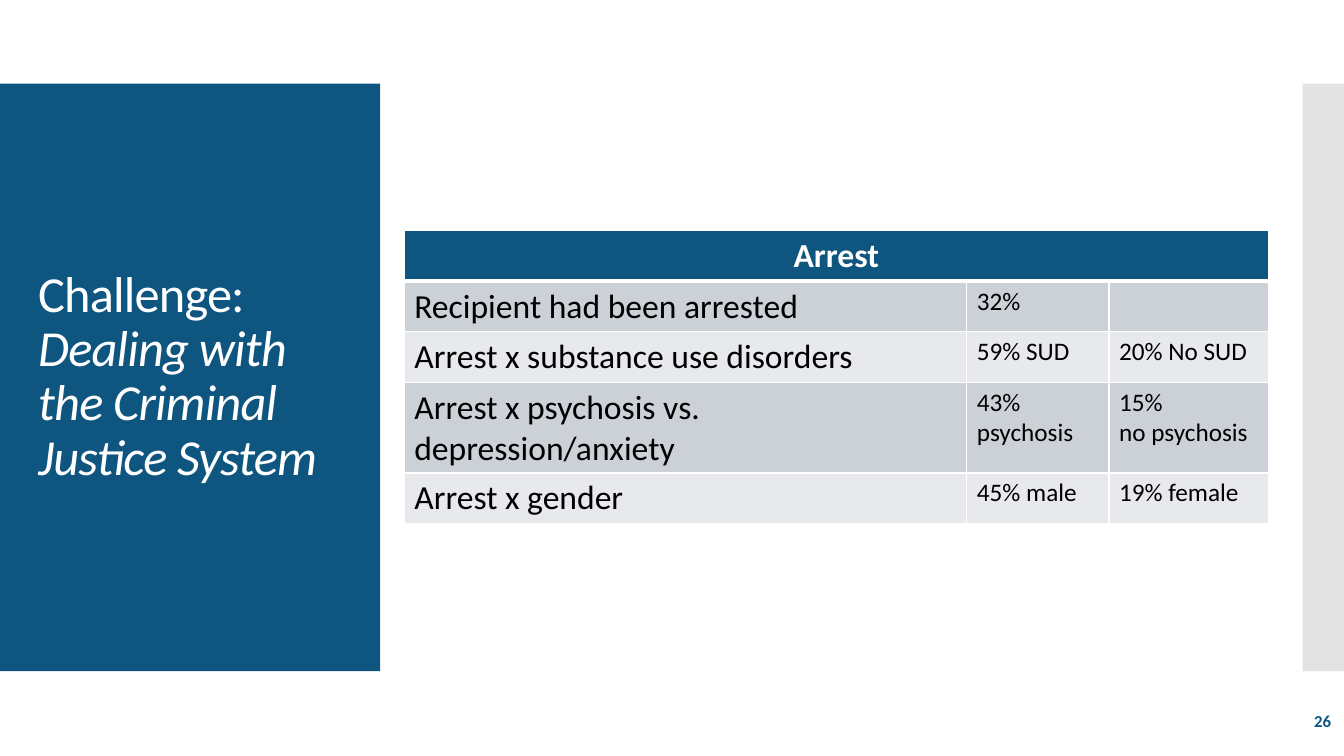
"""Build the slide on dealing with the criminal justice system."""
from pptx import Presentation
from pptx.dml.color import RGBColor
from pptx.enum.shapes import MSO_SHAPE as SHAPE
from pptx.enum.text import MSO_ANCHOR as ANCHOR, PP_ALIGN as ALIGN
from pptx.oxml.ns import qn
from pptx.util import Inches, Pt
from lxml.etree import SubElement

COLORS = {"blue": "0E5580", "grey": "C8C8C8", "white": "FFFFFF",
          "black": "000000", "dark_band": "CCD1D8", "light_band": "E7E9ED"}


def rgb(name):
    return RGBColor.from_string(COLORS[name])


def style(r, size, color, bold=False, italic=False):
    r.font.name = "Calibri"
    r.font.size = Pt(size)
    r.font.color.rgb = rgb(color)
    r.font.bold = bold
    r.font.italic = italic


prs = Presentation()
prs.slide_width, prs.slide_height = Inches(13.33), Inches(7.5)
s = prs.slides.add_slide(prs.slide_layouts[6])

for left, width, color in [(0, 3.77, "blue"), (12.92, 0.41, "grey")]:
    sp = s.shapes.add_shape(SHAPE.RECTANGLE, Inches(left), Inches(0.83),
                            Inches(width), Inches(5.83))
    sp.shadow.inherit = False
    sp.fill.solid()
    sp.fill.fore_color.rgb = rgb(color)
    sp.line.fill.background()
    if color == "grey":
        fill_color = sp._element.spPr.find(qn("a:solidFill"))[0]
        SubElement(fill_color, qn("a:alpha"), val="50000")

title = s.shapes.add_textbox(Inches(0.28), Inches(1.23), Inches(3.22), Inches(5.03))
tf = title.text_frame
tf.word_wrap = True
tf.vertical_anchor = ANCHOR.MIDDLE
p = tf.paragraphs[0]
p.line_spacing = 0.9
for text, italic in [("Challenge: ", False),
                     ("Dealing with the Criminal Justice System", True)]:
    r = p.add_run()
    r.text = text
    style(r, 36, "white", italic=italic)
    r.font._element.set("spc", "-60")

number = s.shapes.add_textbox(Inches(11.63), Inches(6.95), Inches(1.67), Inches(0.4))
tf = number.text_frame
tf.word_wrap = True
tf.vertical_anchor = ANCHOR.MIDDLE
p = tf.paragraphs[0]
p.text = "26"
p.alignment = ALIGN.RIGHT
style(p.runs[0], 12, "blue", bold=True)

rows = [
    ("Arrest", "", ""),
    ("Recipient had been arrested", "32%", ""),
    ("Arrest x substance use disorders", "59% SUD", "20% No SUD"),
    ("Arrest x psychosis vs. depression/anxiety", "43% psychosis", "15%\vno psychosis"),
    ("Arrest x gender", "45% male", "19% female"),
]
col_widths = [5.58, 1.41, 1.58]
row_heights = [0.5, 0.5, 0.5, 0.9, 0.5]
table = s.shapes.add_table(len(rows), len(col_widths), Inches(4.01), Inches(2.29),
                           Inches(sum(col_widths)), Inches(sum(row_heights))).table
for col, width in zip(table.columns, col_widths):
    col.width = Inches(width)
for row, height in zip(table.rows, row_heights):
    row.height = Inches(height)
table.cell(0, 0).merge(table.cell(0, 2))

for i, row in enumerate(rows):
    band = "blue" if i == 0 else "dark_band" if i % 2 else "light_band"
    for j, text in enumerate(row):
        cell = table.cell(i, j)
        tcPr = cell._tc.get_or_add_tcPr()
        for side in "LRTB":
            thick = (i, side) in [(0, "B"), (1, "T")]
            ln = SubElement(tcPr, qn(f"a:ln{side}"), w=str(Pt(3 if thick else 1)))
            line_fill = SubElement(ln, qn("a:solidFill"))
            SubElement(line_fill, qn("a:srgbClr"), val=COLORS["white"])
        cell.fill.solid()
        cell.fill.fore_color.rgb = rgb(band)
        if text:
            p = cell.text_frame.paragraphs[0]
            p.text = text
            p.alignment = ALIGN.CENTER if i == 0 else ALIGN.LEFT
            for r in p.runs:
                style(r, 24 if j == 0 else 18, "white" if i == 0 else "black", bold=i == 0)

prs.save("out.pptx")
